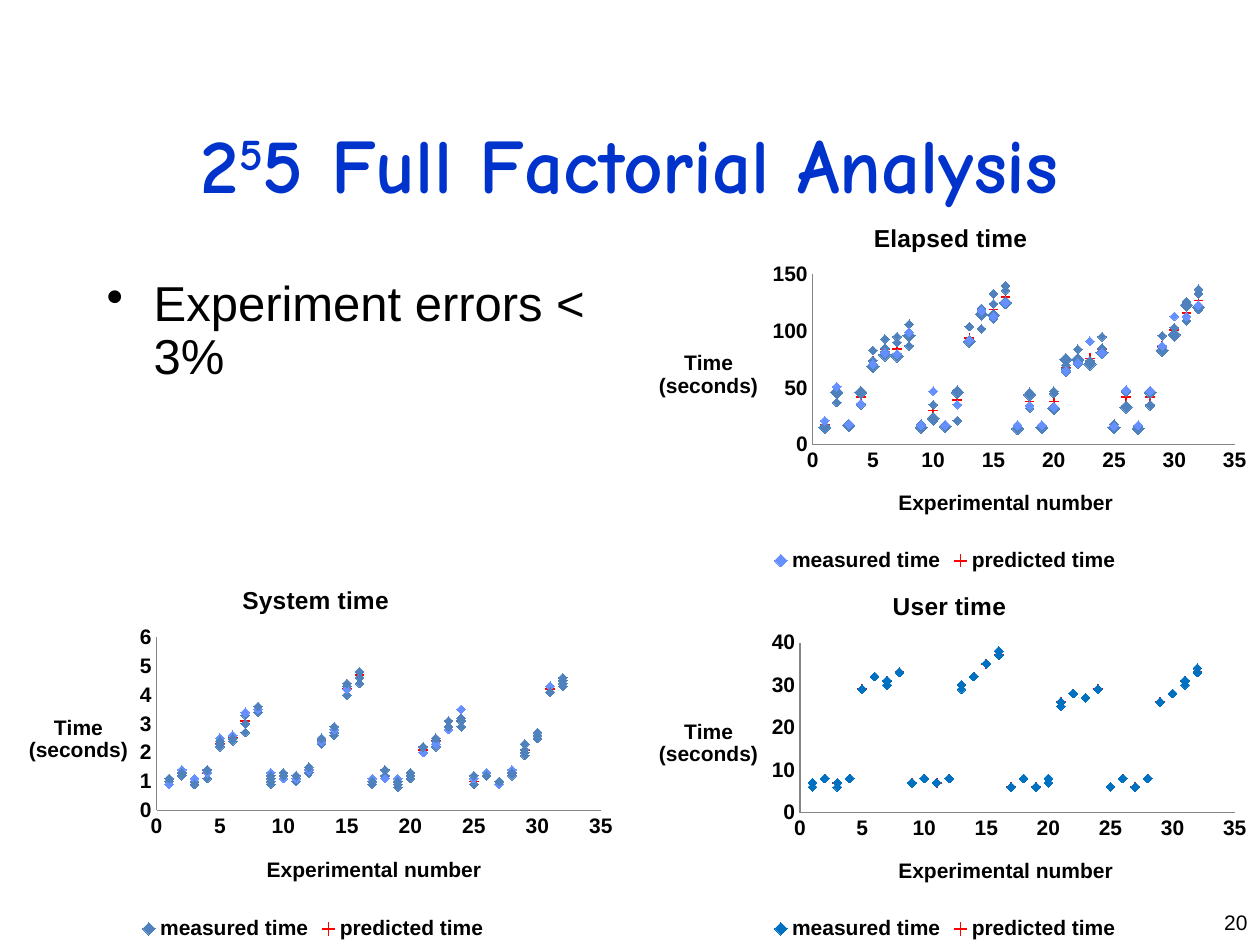
from lxml import etree
from pptx import Presentation
from pptx.chart.data import XyChartData
from pptx.dml.color import RGBColor
from pptx.enum.chart import (XL_CHART_TYPE, XL_LEGEND_POSITION, XL_MARKER_STYLE,
                             XL_TICK_MARK)
from pptx.enum.text import MSO_ANCHOR, PP_ALIGN
from pptx.oxml.ns import qn
from pptx.util import Cm, Pt

SCATTER = XL_CHART_TYPE.XY_SCATTER
BOTTOM = XL_LEGEND_POSITION.BOTTOM
DIAMOND, PLUS = XL_MARKER_STYLE.DIAMOND, XL_MARKER_STYLE.PLUS
NO_TICK = XL_TICK_MARK.NONE
TOP, MIDDLE = MSO_ANCHOR.TOP, MSO_ANCHOR.MIDDLE
LEFT, CENTER, RIGHT = PP_ALIGN.LEFT, PP_ALIGN.CENTER, PP_ALIGN.RIGHT

COLORS = {"title": "0033CC", "text": "000000", "axis": "868686", "steel": "4F81BD",
          "light": "6690FF", "blue": "0070C0", "predicted": "FF0000"}
SERIES = ["measured time", "Series 2", "Series 3", "Series 4", "Series 5", "predicted time"]

# Five measured runs and the predicted time of experiments 1 to 32
ELAPSED = [
    [21, 51, 18, 36, 71, 81, 80, 99, 17, 47, 17, 35, 92, 118, 113, 125,
     17, 34, 17, 33, 65, 72, 91, 81, 16, 48, 17, 47, 87, 113, 113, 123],
    [17, 37, 18, 35, 74, 82, 95, 106, 18, 35, 16, 48, 92, 120, 133, 140,
     17, 34, 17, 47, 70, 74, 74, 85, 18, 47, 16, 35, 86, 103, 126, 137],
    [16, 46, 16, 46, 83, 85, 90, 87, 15, 21, 16, 46, 92, 115, 111, 124,
     14, 46, 15, 45, 67, 71, 73, 80, 14, 46, 15, 34, 84, 97, 109, 119],
    [15, 46, 17, 46, 69, 79, 78, 96, 15, 23, 16, 46, 91, 115, 114, 125,
     14, 44, 15, 32, 75, 75, 71, 81, 15, 33, 14, 46, 83, 97, 123, 121],
    [16, 45, 16, 47, 74, 93, 79, 99, 15, 23, 17, 21, 104, 102, 124, 136,
     15, 32, 14, 31, 64, 84, 73, 95, 16, 34, 14, 47, 96, 95, 109, 133],
    [17, 45, 17, 42, 74, 84, 84, 97, 16, 30, 16, 39, 94, 114, 119, 130,
     15, 38, 16, 38, 68, 75, 76, 84, 16, 42, 15, 42, 87, 101, 116, 127],
]
USER = [
    [7, 8, 7, 8, 29, 32, 31, 33, 7, 8, 7, 8, 30, 32, 35, 38,
     6, 8, 6, 8, 26, 28, 27, 29, 6, 8, 6, 8, 26, 28, 31, 33],
    [7, 8, 7, 8, 29, 32, 30, 33, 7, 8, 7, 8, 30, 32, 35, 37,
     6, 8, 6, 8, 26, 28, 27, 29, 6, 8, 6, 8, 26, 28, 30, 33],
    [7, 8, 6, 8, 29, 32, 30, 33, 7, 8, 7, 8, 30, 32, 35, 38,
     6, 8, 6, 8, 26, 28, 27, 29, 6, 8, 6, 8, 26, 28, 31, 33],
    [7, 8, 7, 8, 29, 32, 31, 33, 7, 8, 7, 8, 29, 32, 35, 37,
     6, 8, 6, 7, 25, 28, 27, 29, 6, 8, 6, 8, 26, 28, 31, 34],
    [6, 8, 7, 8, 29, 32, 31, 33, 7, 8, 7, 8, 30, 32, 35, 37,
     6, 8, 6, 8, 26, 28, 27, 29, 6, 8, 6, 8, 26, 28, 31, 33],
    [7, 8, 7, 8, 29, 32, 31, 33, 7, 8, 7, 8, 30, 32, 35, 37,
     6, 8, 6, 8, 26, 28, 27, 29, 6, 8, 6, 8, 26, 28, 31, 33],
]
SYSTEM = [
    [1.1, 1.3, 0.9, 1.4, 2.4, 2.5, 2.7, 3.6, 1.2, 1.2, 1.2, 1.5, 2.5, 2.9, 4.4, 4.8,
     1, 1.4, 1, 1.3, 2.2, 2.5, 2.9, 3.1, 1.2, 1.2, 1, 1.3, 2.3, 2.6, 4.1, 4.5],
    [0.9, 1.4, 1.1, 1.3, 2.5, 2.6, 3.4, 3.5, 1.3, 1.1, 1.1, 1.4, 2.4, 2.8, 4.2, 4.8,
     1.1, 1.1, 1.1, 1.3, 2, 2.3, 2.8, 3.5, 1.1, 1.3, 0.9, 1.4, 2.3, 2.6, 4.3, 4.5],
    [0.9, 1.3, 1, 1.4, 2.4, 2.5, 3.3, 3.4, 1, 1.2, 1, 1.3, 2.3, 2.7, 4.3, 4.4,
     0.9, 1.2, 1, 1.1, 2, 2.4, 2.9, 2.9, 0.9, 1.3, 1, 1.3, 2.1, 2.7, 4.1, 4.3],
    [1, 1.2, 0.9, 1.4, 2.3, 2.5, 3, 3.4, 0.9, 1.2, 1.1, 1.3, 2.4, 2.8, 4, 4.6,
     1, 1.2, 0.9, 1.2, 2.2, 2.4, 3.1, 3.2, 0.9, 1.2, 0.9, 1.3, 1.9, 2.5, 4.1, 4.4],
    [1.1, 1.2, 0.9, 1.1, 2.2, 2.4, 3, 3.5, 1.1, 1.3, 1, 1.3, 2.3, 2.6, 4.3, 4.8,
     0.9, 1.1, 0.8, 1.2, 2, 2.2, 2.9, 2.9, 0.9, 1.3, 0.9, 1.2, 2, 2.5, 4.3, 4.6],
    [1, 1.3, 1, 1.3, 2.3, 2.5, 3.1, 3.5, 1.1, 1.2, 1.1, 1.4, 2.4, 2.8, 4.2, 4.7,
     1, 1.2, 1, 1.2, 2.1, 2.4, 2.9, 3.1, 1, 1.2, 0.9, 1.3, 2.1, 2.6, 4.2, 4.5],
]


def rgb(name):
    return RGBColor.from_string(COLORS[name])


def add_layout(parent, index, **values):
    """Place a chart part by fractions of the chart's size."""
    for old in parent.findall(qn("c:layout")):
        parent.remove(old)
    layout = etree.Element(qn("c:layout"))
    manual = etree.SubElement(layout, qn("c:manualLayout"))
    if "w" in values:
        etree.SubElement(manual, qn("c:layoutTarget")).set("val", "inner")
    for key in ("xMode", "yMode"):
        etree.SubElement(manual, qn("c:" + key)).set("val", "edge")
    for key, value in values.items():
        etree.SubElement(manual, qn("c:" + key)).set("val", str(value))
    parent.insert(index, layout)


class Deck:
    font = "Arial"

    def __init__(self, prs):
        self.s = prs.slides.add_slide(prs.slide_layouts[6])

    def style(self, font, size, color="text", bold=False, name=None):
        font.name, font.size, font.bold = name or self.font, Pt(size), bold
        font.color.rgb = rgb(color)

    def text(self, box, runs, size, align=LEFT, anchor=TOP, bullet=False, **look):
        """Add a text box; runs are (text, baseline percent) pairs."""
        sp = self.s.shapes.add_textbox(*[Cm(v) for v in box])
        tf = sp.text_frame
        tf.word_wrap, tf.vertical_anchor = True, anchor
        p = tf.paragraphs[0]
        p.alignment = align
        if bullet:
            pPr = p._p.get_or_add_pPr()
            pPr.set("marL", str(Cm(0.95)))
            pPr.set("indent", str(-Cm(0.95)))
            etree.SubElement(pPr, qn("a:buChar")).set("char", "•")
            p.line_spacing = 0.9
        for text, baseline in runs:
            r = p.add_run()
            r.text = text
            self.style(r.font, size, **look)
            if baseline:
                r._r.get_or_add_rPr().set("baseline", str(baseline * 1000))

    def chart_title(self, title, text, size, x, y):
        tf = title.text_frame
        r = tf.paragraphs[0].add_run()
        r.text = text
        self.style(r.font, size, bold=True)
        tf._txBody.find(qn("a:bodyPr")).set("rot", "0")
        add_layout(title._element, 1, x=x, y=y)

    def axis(self, axis, top, step, text, x, y):
        axis.minimum_scale, axis.maximum_scale, axis.major_unit = 0, top, step
        axis.has_major_gridlines = False
        axis.major_tick_mark = axis.minor_tick_mark = NO_TICK
        axis.tick_labels.number_format = "0"
        axis.tick_labels.number_format_is_linked = False
        axis.format.line.color.rgb = rgb("axis")
        self.chart_title(axis.axis_title, text, 12, x, y)

    def scatter(self, box, title, title_x, runs, top, step, plot_x, colors, sizes):
        data = XyChartData()
        for name, values in zip(SERIES, runs):
            series = data.add_series(name)
            for number, value in enumerate(values, 1):
                series.add_data_point(number, value)
        chart = self.s.shapes.add_chart(SCATTER, *[Cm(v) for v in box], data).chart
        self.style(chart.font, 12, bold=True)
        self.chart_title(chart.chart_title, title, 14, title_x, 0.05)
        self.axis(chart.category_axis, 35, 5, "Experimental number", 0.42, 0.76)
        self.axis(chart.value_axis, top, step, "Time (seconds)", 0.04, 0.39)
        plot = chart.plots[0]
        plot.vary_by_categories = False
        add_layout(chart._chartSpace.chart.plotArea, 0,
                   x=plot_x, y=0.2, w=round(0.96 - plot_x, 2), h=0.45)
        # Markers only
        for series, color, size in zip(plot.series, colors, sizes):
            series.smooth = False
            series.format.line.fill.background()
            marker = series.marker
            marker.style = PLUS if color == "predicted" else DIAMOND
            marker.size = size
            marker.format.fill.solid()
            marker.format.fill.fore_color.rgb = rgb(color)
            marker.format.line.color.rgb = rgb(color)
        # The legend names only the first and last series
        chart.has_legend = True
        legend = chart.legend
        legend.position, legend.include_in_layout = BOTTOM, False
        for i in range(1, len(SERIES) - 1):
            entry = etree.Element(qn("c:legendEntry"))
            etree.SubElement(entry, qn("c:idx")).set("val", str(i))
            etree.SubElement(entry, qn("c:delete")).set("val", "1")
            legend._element.insert(i, entry)


def main():
    prs = Presentation()
    prs.slide_width, prs.slide_height = Cm(25.4), Cm(19.05)
    deck = Deck(prs)

    # Heading, finding and slide number
    deck.text((1.9, 1.7, 21.6, 3.18), [("2", 0), ("5", 30), ("5 Full Factorial Analysis", 0)],
              44, CENTER, MIDDLE, color="title", bold=True, name="Comic Neue")
    deck.text((1.9, 5.51, 10.6, 11.43), [("Experiment errors < 3%", 0)], 28, bullet=True)
    deck.text((23.5, 18.21, 1.9, 0.84), [("20", 0)], 12, RIGHT)

    # Measured and predicted times
    even = [5] * 6
    deck.scatter((12.7, 4.01, 12.7, 7.62), "Elapsed time", 0.38, ELAPSED, 150, 50, 0.29,
                 ["light"] + ["steel"] * 4 + ["predicted"], [5, 5, 5, 7, 5, 5])
    deck.scatter((12.7, 11.43, 12.7, 7.62), "User time", 0.41, USER, 40, 10, 0.27,
                 ["blue"] * 5 + ["predicted"], even)
    deck.scatter((0, 11.3, 12.62, 7.75), "System time", 0.38, SYSTEM, 6, 1, 0.25,
                 ["steel", "light"] + ["steel"] * 3 + ["predicted"], even)
    prs.save("out.pptx")


if __name__ == "__main__":
    main()
